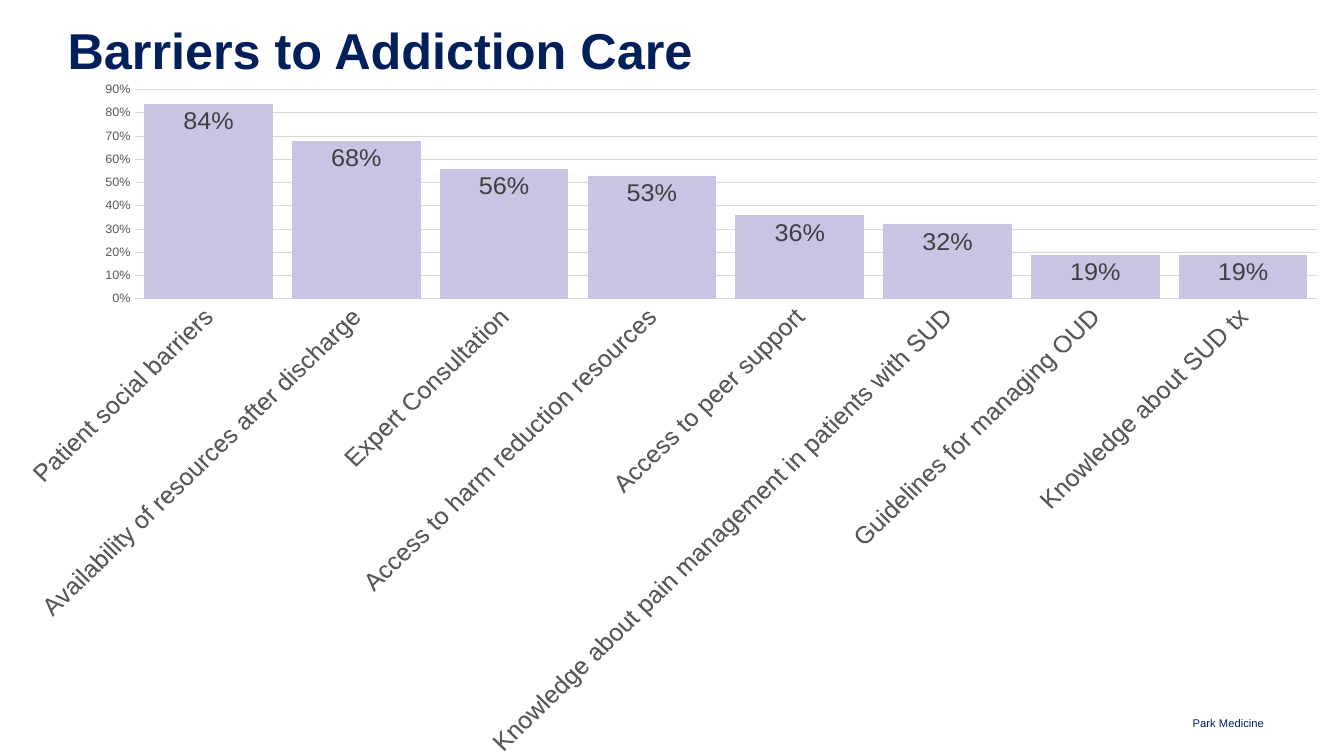
from dataclasses import dataclass

from pptx import Presentation
from pptx.chart.data import CategoryChartData
from pptx.dml.color import RGBColor
from pptx.enum.chart import XL_CHART_TYPE as ChartType
from pptx.enum.chart import XL_LABEL_POSITION as LabelPosition
from pptx.enum.chart import XL_TICK_MARK as TickMark
from pptx.enum.text import MSO_ANCHOR as Anchor
from pptx.enum.text import PP_ALIGN as Align
from pptx.util import Pt

# Content
TITLE = "Barriers to Addiction Care"
FOOTER = "Park Medicine"
BARRIERS = [
    ("Patient social barriers", 0.84),
    ("Availability of resources after discharge", 0.68),
    ("Expert Consultation", 0.56),
    ("Access to harm reduction resources", 0.53),
    ("Access to peer support", 0.36),
    ("Knowledge about pain management in patients with SUD", 0.32),
    ("Guidelines for managing OUD", 0.19),
    ("Knowledge about SUD tx", 0.19),
]


@dataclass(frozen=True)
class Theme:
    font: str = "Arial"
    navy: str = "011F5B"
    bar: str = "CBC3E3"
    grid: str = "D9D9D9"
    axis_text: str = "595959"
    label_text: str = "404040"
    title_size: float = 36
    label_size: float = 18
    scale_size: float = 9
    footer_size: float = 8


THEME = Theme()

# Layout in points: left, top, width, height
SLIDE_WIDTH, SLIDE_HEIGHT = 960, 540
CHART_TOP = 54.72
TITLE_BOX = (48.24, 18.72, 846.72, 71.28)
FOOTER_BOX = (712.8, 506.88, 190.08, 14.4)
CHART_BOX = (0, CHART_TOP, SLIDE_WIDTH, SLIDE_HEIGHT - CHART_TOP)


def style_font(font, size, color, bold=False):
    font.name = THEME.font
    font.size = Pt(size)
    font.bold = bold
    font.color.rgb = RGBColor.from_string(color)


def style_line(line):
    line.color.rgb = RGBColor.from_string(THEME.grid)
    line.width = Pt(0.75)


def add_text(slide, box, text, size, bold=False, align=Align.LEFT,
             anchor=Anchor.TOP, spacing=1.0):
    frame = slide.shapes.add_textbox(*map(Pt, box)).text_frame
    frame.word_wrap = True
    frame.vertical_anchor = anchor
    frame.margin_left = frame.margin_right = 0
    frame.margin_top = frame.margin_bottom = 0
    paragraph = frame.paragraphs[0]
    paragraph.alignment = align
    paragraph.line_spacing = spacing
    run = paragraph.add_run()
    run.text = text
    style_font(run.font, size, THEME.navy, bold)


def add_barrier_chart(slide):
    names, shares = zip(*BARRIERS)
    data = CategoryChartData(number_format="0%")
    data.categories = names
    data.add_series("Series 1", shares)
    chart = slide.shapes.add_chart(
        ChartType.COLUMN_CLUSTERED, *map(Pt, CHART_BOX), data).chart
    chart.has_legend = False
    chart.has_title = False
    chart.font.name = THEME.font
    chart.font.size = Pt(10)

    # Bars and their labels
    plot = chart.plots[0]
    plot.gap_width = 15
    plot.overlap = -27
    plot.vary_by_categories = False
    fill = plot.series[0].format.fill
    fill.solid()
    fill.fore_color.rgb = RGBColor.from_string(THEME.bar)
    plot.has_data_labels = True
    labels = plot.data_labels
    labels.show_value = True
    labels.position = LabelPosition.INSIDE_END
    labels.number_format = "0%"
    labels.number_format_is_linked = False
    style_font(labels.font, THEME.label_size, THEME.label_text)

    # Axes
    category_axis, value_axis = chart.category_axis, chart.value_axis
    for axis, size in ((category_axis, THEME.label_size),
                       (value_axis, THEME.scale_size)):
        axis.major_tick_mark = axis.minor_tick_mark = TickMark.NONE
        style_font(axis.tick_labels.font, size, THEME.axis_text)
    style_line(category_axis.format.line)
    # This rotation value means automatic label slant
    category_axis._element.txPr.bodyPr.set("rot", "-60000000")
    value_axis.minimum_scale = 0
    value_axis.maximum_scale = 0.9
    value_axis.major_unit = 0.1
    value_axis.tick_labels.number_format = "0%"
    value_axis.tick_labels.number_format_is_linked = False
    value_axis.format.line.fill.background()
    value_axis.has_major_gridlines = True
    style_line(value_axis.major_gridlines.format.line)


def main():
    presentation = Presentation()
    presentation.slide_width = Pt(SLIDE_WIDTH)
    presentation.slide_height = Pt(SLIDE_HEIGHT)
    slide = presentation.slides.add_slide(presentation.slide_layouts[6])
    add_text(slide, FOOTER_BOX, FOOTER, THEME.footer_size,
             align=Align.RIGHT, anchor=Anchor.BOTTOM)
    add_text(slide, TITLE_BOX, TITLE, THEME.title_size, bold=True, spacing=0.9)
    add_barrier_chart(slide)
    presentation.save("out.pptx")


if __name__ == "__main__":
    main()
